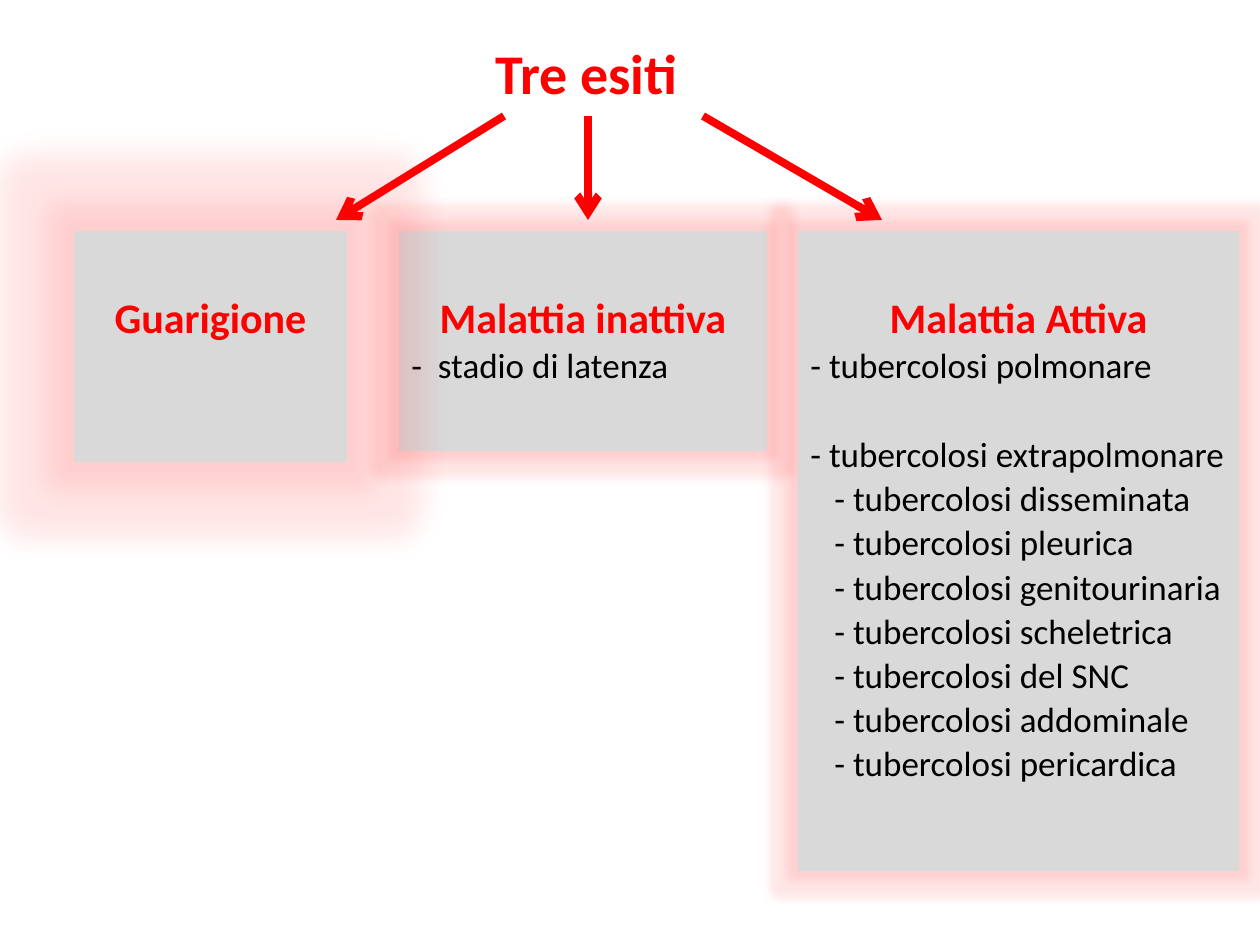
import pptx
import pptx.util
import pptx.dml.color
import pptx.enum.shapes
import pptx.enum.text
import pptx.oxml
import pptx.oxml.ns

EMU_PER_PX = 914400 / 126
RED, GREY, BLACK = "FF0000", "D9D9D9", "000000"
ALIGN = pptx.enum.text.PP_ALIGN


def px(n):
    return pptx.util.Emu(round(n * EMU_PER_PX))


def rgb(value):
    return pptx.dml.color.RGBColor.from_string(value)


def xml(body):
    return pptx.oxml.parse_xml(body.replace(">", " " + pptx.oxml.ns.nsdecls("a") + ">", 1))


class Deck:
    FONT = "Calibri"
    FORMATS = {
        "title": {"size": pptx.util.Pt(32), "bold": True},
        "heading": {"size": pptx.util.Pt(24), "bold": True},
        "item": {"size": pptx.util.Pt(20), "bold": False},
    }
    COLOURS = {"title": RED, "heading": RED, "item": BLACK}

    def __init__(self, width, height):
        self.prs = pptx.Presentation()
        self.prs.slide_width, self.prs.slide_height = px(width), px(height)
        self.slide = self.prs.slides.add_slide(self.prs.slide_layouts[6])

    def run(self, p, text, style):
        r = p.add_run()
        r.text = text
        r.font.name = self.FONT
        r.font.color.rgb = rgb(self.COLOURS[style])
        for name, value in self.FORMATS[style].items():
            setattr(r.font, name, value)

    def title(self, x, y, w, h, text):
        tf = self.slide.shapes.add_textbox(px(x), px(y), px(w), px(h)).text_frame
        tf.word_wrap = False
        tf.auto_size = pptx.enum.text.MSO_AUTO_SIZE.SHAPE_TO_FIT_TEXT
        self.run(tf.paragraphs[0], text, "title")

    def card(self, x, y, w, h, glow, heading, items=()):
        """Grey box with a red glow; items are (text, level, space before in points)."""
        s = self.slide.shapes.add_shape(
            pptx.enum.shapes.MSO_SHAPE.RECTANGLE, px(x), px(y), px(w), px(h))
        s.fill.solid()
        s.fill.fore_color.rgb = rgb(GREY)
        s.line.fill.background()
        s.shadow.inherit = False
        effects = s._element.spPr.find(pptx.oxml.ns.qn("a:effectLst"))
        effects.append(xml(f'<a:glow rad="{pptx.util.Pt(glow)}"><a:srgbClr val="{RED}">'
                           '<a:alpha val="10000"/></a:srgbClr></a:glow>'))
        tf = s.text_frame
        tf.word_wrap = True
        tf.vertical_anchor = pptx.enum.text.MSO_ANCHOR.TOP
        tf.margin_top = px(66)
        p = tf.paragraphs[0]
        p.alignment, p.line_spacing = ALIGN.CENTER, 0.9
        self.run(p, heading, "heading")
        for text, level, before in items:
            p = tf.add_paragraph()
            p.alignment, p.line_spacing = ALIGN.LEFT, 0.9
            p.space_before = pptx.util.Pt(before)
            p._p.get_or_add_pPr().set("marL", str(px(24 * level)))
            self.run(p, text, "item")

    def arrow(self, x1, y1, x2, y2):
        s = self.slide.shapes.add_connector(
            pptx.enum.shapes.MSO_CONNECTOR.STRAIGHT, px(x1), px(y1), px(x2), px(y2))
        s.line.color.rgb = rgb(RED)
        s.line.width = pptx.util.Pt(4.5)
        s.line._get_or_add_ln().append(xml('<a:tailEnd type="arrow"></a:tailEnd>'))
        s._element.spPr.append(xml("<a:effectLst></a:effectLst>"))


def main():
    gap, wide_gap = 3.6, 29.2
    sites = ["disseminata", "pleurica", "genitourinaria", "scheletrica",
             "del SNC", "addominale", "pericardica"]
    active = [("- tubercolosi polmonare", 0, gap),
              ("- tubercolosi extrapolmonare", 0, wide_gap)]
    active += [(f"- tubercolosi {site}", 1, gap) for site in sites]

    deck = Deck(1260, 945)
    deck.card(399, 231, 368, 220, 11, "Malattia inattiva",
              [("-  stadio di latenza", 0, gap)])
    deck.card(798, 231, 441, 640, 11, "Malattia Attiva", active)
    deck.title(483, 32, 213, 81, "Tre esiti")
    deck.card(74, 231, 273, 231, 32, "Guarigione")
    for start, end in [(703, 882), (504, 336), (588, 588)]:
        deck.arrow(start, 116, end, 220)
    deck.prs.save("out.pptx")


if __name__ == "__main__":
    main()
